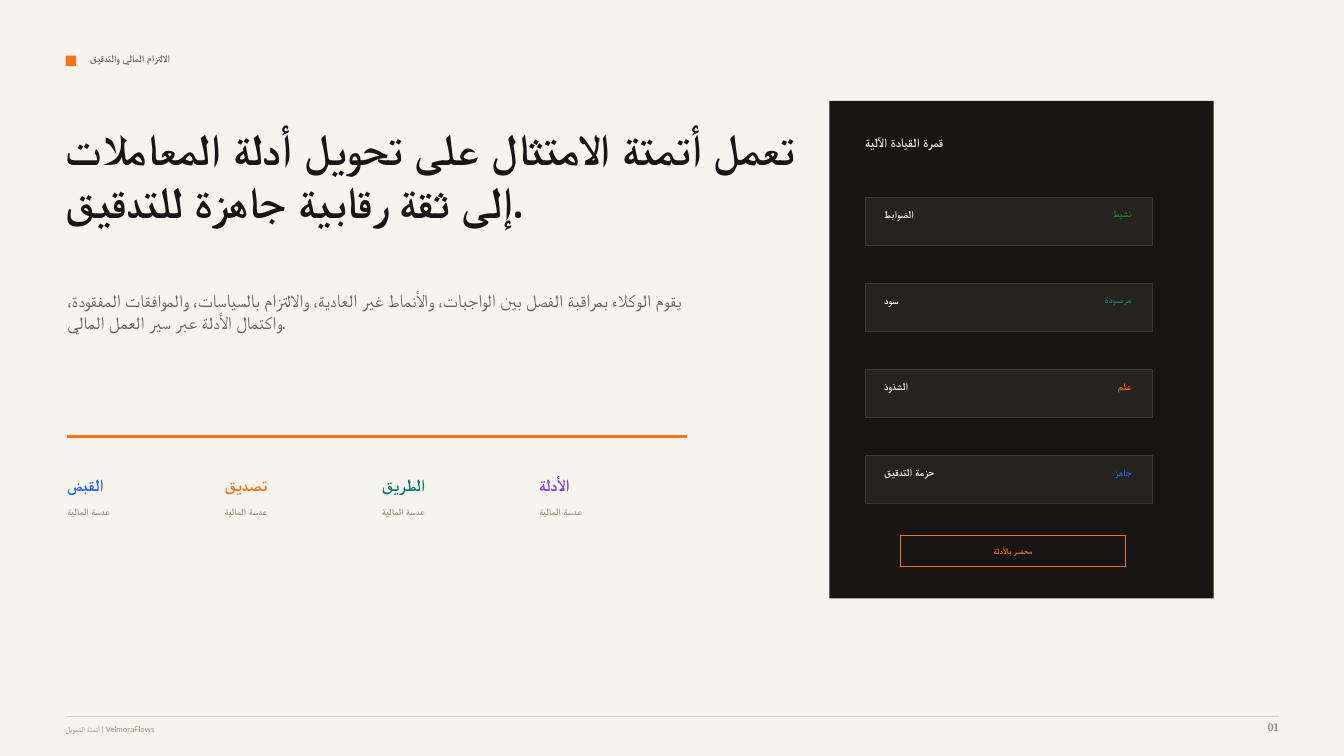
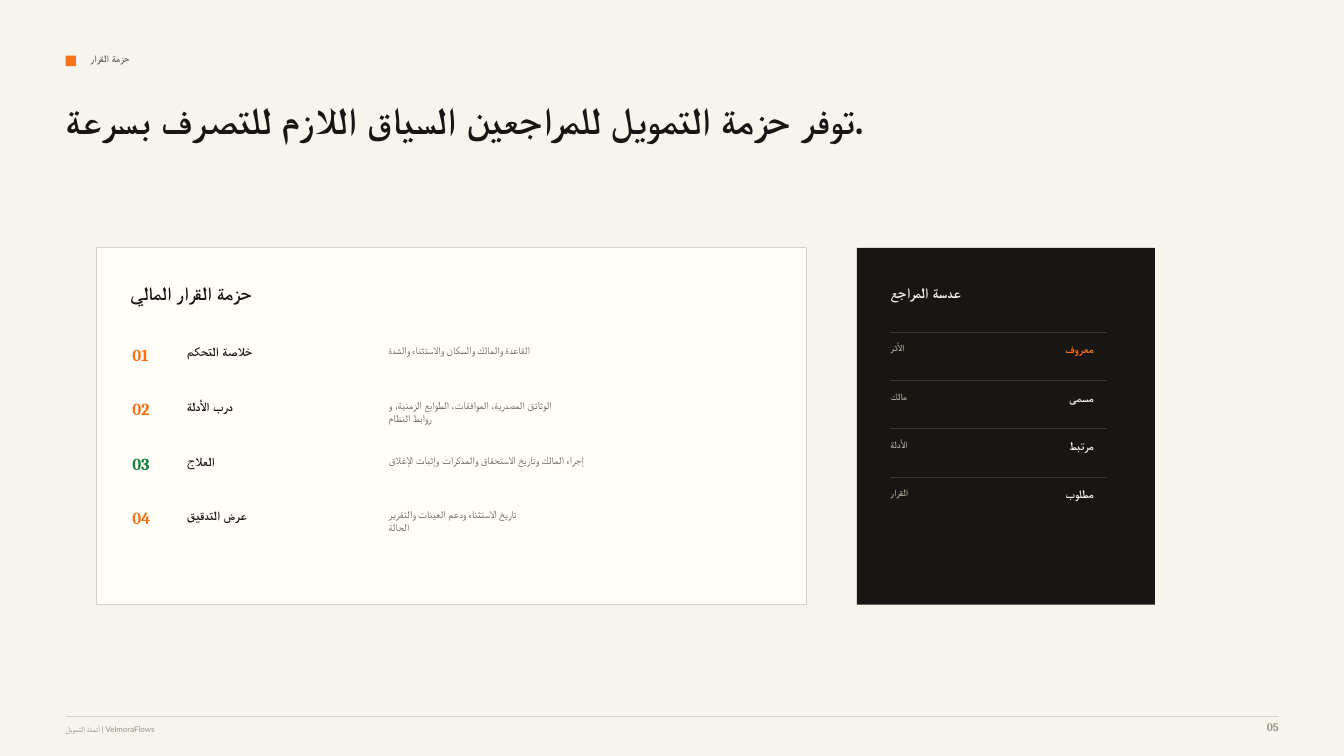
from lxml import etree
from pptx import Presentation
from pptx.dml.color import RGBColor
from pptx.enum.shapes import MSO_CONNECTOR as Connector, MSO_SHAPE as Preset
from pptx.enum.text import MSO_ANCHOR as Anchor, MSO_AUTO_SIZE as AutoSize, PP_ALIGN as Align
from pptx.oxml.ns import qn
from pptx.util import Pt

COLORS = {
    "paper": "F7F4EE", "card": "FFFDF8", "ink": "171614", "muted": "69635A",
    "faint": "9A9184", "rule": "D9D0C3", "row": "26231F", "row_line": "3C362E",
    "panel_title": "EDE7DD", "panel_label": "AFA79B", "orange": "F97316",
    "blue": "2563EB", "teal": "0F766E", "violet": "7C3AED", "green": "15803D",
}
SERIF, SANS = "Cambria", "Lato"
WIDTH, HEIGHT = 960, 540
MARGIN, RIGHT_EDGE = 46.8, 913.5
FOOTER = "أتمتة التمويل | VelmoraFlows"


def color(name):
    return RGBColor.from_string(COLORS[name])


def fill_frame(frame, lines, size, ink, font=SANS, bold=True, align=Align.LEFT, anchor=Anchor.TOP):
    """Write one paragraph per line, without margins or bullets."""
    frame.word_wrap = True
    frame.auto_size = AutoSize.NONE
    frame.vertical_anchor = anchor
    frame.margin_left = frame.margin_right = frame.margin_top = frame.margin_bottom = 0
    for index, line in enumerate(lines):
        paragraph = frame.add_paragraph() if index else frame.paragraphs[0]
        paragraph.alignment = align
        paragraph.space_before = Pt(0)
        run = paragraph.add_run()
        run.text = line
        run.font.name, run.font.size, run.font.bold = font, Pt(size), bold
        run.font.color.rgb = color(ink)


def add_text(slide, box, text, size, ink, **style):
    text_box = slide.shapes.add_textbox(*map(Pt, box))
    fill_frame(text_box.text_frame, text.split("\n"), size, ink, **style)


def add_rectangle(slide, box, fill=None, line=None):
    shape = slide.shapes.add_shape(Preset.RECTANGLE, *map(Pt, box))
    shape.shadow.inherit = False
    if fill:
        shape.fill.solid()
        shape.fill.fore_color.rgb = color(fill)
    else:
        shape.fill.background()
    if line:
        shape.line.color.rgb = color(line)
        shape.line.width = Pt(0.75)
    else:
        shape.line.fill.background()
    return shape


def add_rule(slide, left, top, width, ink, weight=0.75):
    rule = slide.shapes.add_connector(
        Connector.STRAIGHT, Pt(left), Pt(top), Pt(left + width), Pt(top))
    rule.line.color.rgb = color(ink)
    rule.line.width = Pt(weight)
    etree.SubElement(rule._element.spPr, qn("a:effectLst"))


def fill_placeholder(placeholder, box, text, size, ink, **style):
    placeholder.left, placeholder.top, placeholder.width, placeholder.height = map(Pt, box)
    fill_frame(placeholder.text_frame, [text], size, ink, **style)


def add_base_slide(presentation, layout, section, number, title, title_box, title_size):
    """Add a slide with its section marker, title and footer."""
    slide = presentation.slides.add_slide(presentation.slide_layouts[layout])
    add_rectangle(slide, (MARGIN, 39.75, 7.5, 7.5), "orange")
    add_text(slide, (64.5, 37.5, 420, 13.5), section, 7.1, "muted")
    fill_placeholder(slide.shapes.title, title_box, title, title_size, "ink", font=SERIF)
    add_rule(slide, MARGIN, 511.6, RIGHT_EDGE - MARGIN, "rule")
    add_text(slide, (MARGIN, 517.5, 570, 10.5), FOOTER, 5.6, "faint", bold=False)
    add_text(slide, (RIGHT_EDGE - 36, 514.5, 36, 13.5), number, 8.2, "faint",
             font=SERIF, align=Align.RIGHT)
    return slide


def add_lens_columns(slide, left, top, columns):
    for index, (name, ink) in enumerate(columns):
        column_left = left + index * 112.4
        add_text(slide, (column_left, top, 90, 15), name, 12, ink, font=SERIF)
        add_text(slide, (column_left, top + 22.4, 82.5, 12), "عدسة المالية", 6.8, "faint")


def add_autopilot_panel(slide, box, title, rows, badge):
    left, top = box[:2]
    add_rectangle(slide, box, "ink")
    add_text(slide, (left + 25.5, top + 24, 165, 18), title, 9, "panel_title")
    for index, (name, status, ink) in enumerate(rows):
        row_left, row_top = left + 25.5, top + 69 + index * 61.5
        add_rectangle(slide, (row_left, row_top, 205.5, 34.5), "row", "row_line")
        add_text(slide, (row_left + 13.5, row_top + 7.5, 97.5, 12), name, 7.5, "paper")
        add_text(slide, (row_left + 118.5, row_top + 7.5, 72, 12), status, 7.1, ink,
                 align=Align.RIGHT)
    button = add_rectangle(slide, (left + 51, top + 310.5, 160.5, 22.5), line="orange")
    fill_frame(button.text_frame, [badge], 6, "orange", align=Align.CENTER, anchor=Anchor.MIDDLE)


def add_packet_card(slide, box, title, rows):
    left, top = box[:2]
    add_rectangle(slide, box, "card", "rule")
    add_text(slide, (left + 24, top + 24, 225, 18), title, 13.5, "ink")
    for index, (name, detail, ink) in enumerate(rows):
        row_top = top + 69 + index * 39
        add_text(slide, (left + 25.5, row_top, 25.5, 18), f"{index + 1:02}", 12, ink, font=SERIF)
        add_text(slide, (left + 64.5, row_top, 130.5, 13.5), name, 9, "ink")
        add_text(slide, (left + 208.5, row_top, 240, 22.5), detail, 7.5, "muted", bold=False)


def add_reviewer_panel(slide, box, title, rows):
    left, top = box[:2]
    add_rectangle(slide, box, "ink")
    add_text(slide, (left + 24, top + 25.5, 120, 15), title, 10.5, "paper")
    for index, (name, value, ink) in enumerate(rows):
        row_top = top + 60.4 + index * 34.5
        add_rule(slide, left + 24, row_top, 154.5, "row_line")
        add_text(slide, (left + 24, row_top + 7.2, 69, 12), name, 6.8, "panel_label")
        add_text(slide, (left + 108, row_top + 7.2, 61.5, 12), value, 8.2, ink,
                 align=Align.RIGHT)


def build_compliance_slide(presentation):
    slide = add_base_slide(
        presentation, 1, "الالتزام المالي والتدقيق", "01",
        "تعمل أتمتة الامتثال على تحويل أدلة المعاملات إلى ثقة رقابية جاهزة للتدقيق.",
        (MARGIN, 87, 555, 94.5), 31.5)
    body = slide.placeholders[1]
    properties = body.text_frame.paragraphs[0]._p.get_or_add_pPr()
    properties.set("marL", "0")
    properties.set("indent", "0")
    etree.SubElement(properties, qn("a:buNone"))
    fill_placeholder(
        body, (48, 207, 465, 66),
        "يقوم الوكلاء بمراقبة الفصل بين الواجبات، والأنماط غير العادية، والالتزام بالسياسات، "
        "والموافقات المفقودة، واكتمال الأدلة عبر سير العمل المالي.",
        12.8, "muted", bold=False)
    add_rule(slide, 48, 311.5, 442.5, "orange", 2.25)
    add_lens_columns(slide, 48, 339, [
        ("القبض", "blue"), ("تصديق", "orange"), ("الطريق", "teal"), ("الأدلة", "violet")])
    add_autopilot_panel(slide, (592.5, 72, 274.5, 355.5), "قمرة القيادة الآلية", [
        ("الضوابط", "نشيط", "green"),
        ("سود", "مرصودة", "teal"),
        ("الشذوذ", "علم", "orange"),
        ("حزمة التدقيق", "جاهز", "blue"),
    ], "محضر بالأدلة")


def build_decision_slide(presentation):
    slide = add_base_slide(
        presentation, 5, "حزمة القرار", "05",
        "توفر حزمة التمويل للمراجعين السياق اللازم للتصرف بسرعة.",
        (MARGIN, 69, 675, 73.5), 27)
    add_packet_card(slide, (69, 177, 507, 255), "حزمة القرار المالي", [
        ("خلاصة التحكم", "القاعدة والمالك والسكان والاستثناء والشدة", "orange"),
        ("درب الأدلة", "الوثائق المصدرية، الموافقات، الطوابع الزمنية، و\nروابط النظام", "orange"),
        ("العلاج", "إجراء المالك وتاريخ الاستحقاق والمذكرات وإثبات الإغلاق", "green"),
        ("عرض التدقيق", "تاريخ الاستثناء ودعم العينات والتقرير\nالحالة", "orange"),
    ])
    add_reviewer_panel(slide, (612, 177, 213, 255), "عدسة المراجع", [
        ("الأثر", "معروف", "orange"),
        ("مالك", "مسمى", "paper"),
        ("الأدلة", "مرتبط", "paper"),
        ("القرار", "مطلوب", "paper"),
    ])


def main():
    presentation = Presentation()
    presentation.slide_width, presentation.slide_height = Pt(WIDTH), Pt(HEIGHT)
    background = presentation.slide_master.background.fill
    background.solid()
    background.fore_color.rgb = color("paper")
    build_compliance_slide(presentation)
    build_decision_slide(presentation)
    presentation.save("out.pptx")


if __name__ == "__main__":
    main()
